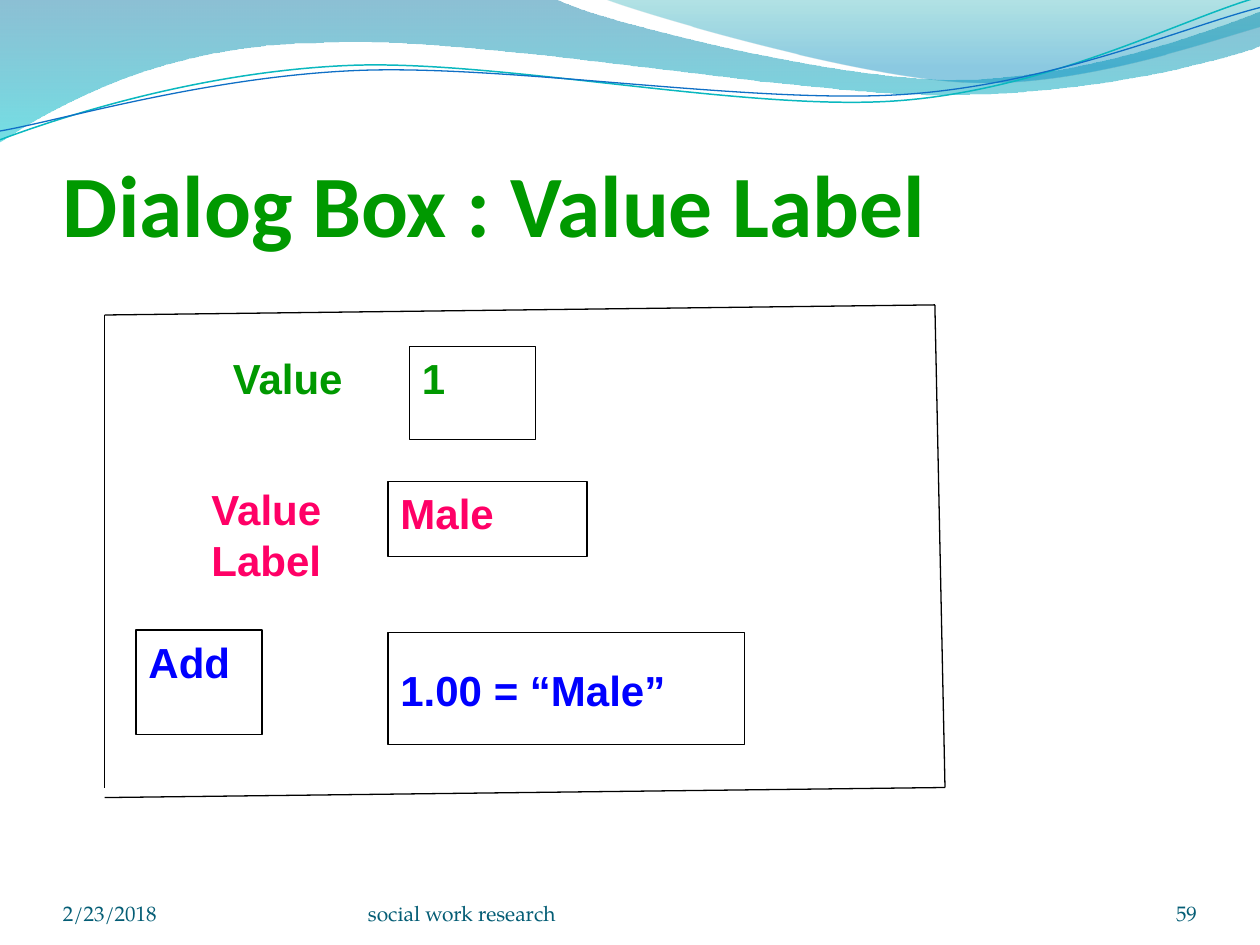
from lxml import etree
from pptx import Presentation
from pptx.dml.color import RGBColor
from pptx.enum.shapes import MSO_CONNECTOR, MSO_SHAPE
from pptx.enum.text import MSO_ANCHOR, PP_ALIGN
from pptx.oxml.ns import qn
from pptx.util import Inches, Pt

RECT, LINE = MSO_SHAPE.RECTANGLE, MSO_CONNECTOR.STRAIGHT
TOP, MID, LOW = MSO_ANCHOR.TOP, MSO_ANCHOR.MIDDLE, MSO_ANCHOR.BOTTOM
LEFT, RIGHT = PP_ALIGN.LEFT, PP_ALIGN.RIGHT

BLACK = RGBColor(0x00, 0x00, 0x00)
WHITE = RGBColor(0xFF, 0xFF, 0xFF)
GREEN = RGBColor(0x00, 0x99, 0x00)
PINK = RGBColor(0xFF, 0x00, 0x66)
BLUE = RGBColor(0x00, 0x00, 0xFF)
TEAL = RGBColor(0x04, 0x5D, 0x75)
DEEP = RGBColor(0x00, 0x74, 0xA1)
CYAN = RGBColor(0x00, 0xC6, 0xCF)
SEA = RGBColor(0x00, 0xA1, 0xA9)
SKY = RGBColor(0x00, 0x8B, 0xBF)
AQUA = RGBColor(0x0A, 0xB8, 0xBF)
ROYAL = RGBColor(0x0F, 0x6F, 0xC6)

PAD = (0.1, 0.05, 0.1, 0.05)
FLAT = (0, 0, 0, 0)

# Each wave is a start point, then line ends (2 numbers) or Bezier curves (6)
BAND = [(0, -0.01), (4.4, -0.01), (4.76, 0.17, 6.64, 0.63, 7.58, 0.63),
        (8.53, 0.63, 9.58, 0.26, 10, 0.09), (10.01, 0.36),
        (9.83, 0.44, 8.7, 0.76, 7.46, 0.75), (6.22, 0.75, 3.82, 0.28, 2.57, 0.34),
        (1.29, 0.35, 0.46, 0.83, -0.01, 1.13)]
CREST = [(4.79, -0.01), (5.09, 0.11, 6.82, 0.62, 7.69, 0.65),
         (8.56, 0.69, 9.61, 0.32, 10, 0.21), (10, 0)]
UPPER = [(0, 1.11), (0.48, 0.93, 1.58, 0.57, 2.77, 0.52),
         (3.95, 0.47, 5.93, 0.89, 7.13, 0.8), (8.33, 0.71, 9.38, 0.15, 9.98, -0.02)]
LOWER = [(0, 1.04), (0.47, 0.96, 1.64, 0.61, 2.83, 0.56),
         (4.03, 0.51, 5.97, 0.83, 7.17, 0.75), (8.36, 0.67, 9.41, 0.21, 10, 0.06)]


def add_wave(slide, parts, close):
    """Draw the end points as lines, then bend those that are curves."""
    parts = [tuple(map(Inches, part)) for part in parts]
    form = slide.shapes.build_freeform(*parts[0], scale=1)
    form.add_line_segments([part[-2:] for part in parts[1:]], close=close)
    wave = form.convert_to_shape()
    wave.shadow.inherit = False
    sides = list(wave._element.spPr.iter(qn("a:lnTo")))
    for side, part in zip(sides, parts[1:]):
        if len(part) == 6:
            bend = etree.Element(qn("a:cubicBezTo"))
            for x, y in zip(part[::2], part[1::2]):
                point = etree.SubElement(bend, qn("a:pt"))
                point.set("x", str(x - wave.left))
                point.set("y", str(y - wave.top))
            side.getparent().replace(side, bend)
    return wave


def add_fill(slide, parts, stops):
    wave = add_wave(slide, parts, True)
    wave.line.fill.background()
    wave.fill.gradient()
    wave.fill.gradient_angle = 270
    for stop, (pos, color, _) in zip(wave.fill.gradient_stops, stops):
        stop.position = pos
        stop.color.rgb = color
    tints = wave._element.spPr.iter(qn("a:srgbClr"))
    for tint, (_, _, alpha) in zip(list(tints), stops):
        etree.SubElement(tint, qn("a:alpha")).set("val", str(alpha * 1000))


def add_curve(slide, parts, color, width):
    wave = add_wave(slide, parts, False)
    wave.fill.background()
    wave.line.color.rgb = color
    wave.line.width = Pt(width)


def set_text(shape, text, color, size=24, font="Arial", bold=True,
             anchor=TOP, align=LEFT, pad=PAD):
    frame = shape.text_frame
    frame.word_wrap = True
    frame.vertical_anchor = anchor
    (frame.margin_left, frame.margin_top,
     frame.margin_right, frame.margin_bottom) = map(Inches, pad)
    frame.text = text
    para = frame.paragraphs[0]
    para.alignment = align
    style = para.runs[0].font
    style.name, style.size, style.bold = font, Pt(size), bold
    style.color.rgb = color


def add_text(slide, spot, text, color, **look):
    set_text(slide.shapes.add_textbox(*map(Inches, spot)), text, color, **look)


def add_box(slide, spot, text, color, **look):
    box = slide.shapes.add_shape(RECT, *map(Inches, spot))
    box.shadow.inherit = False
    box.fill.solid()
    box.fill.fore_color.rgb = WHITE
    box.line.color.rgb = BLACK
    box.line.width = Pt(0.75)
    set_text(box, text, color, **look)


def add_line(slide, *ends):
    line = slide.shapes.add_connector(LINE, *map(Inches, ends))
    line.line.color.rgb = BLACK
    line.line.width = Pt(0.75)
    etree.SubElement(line._element.spPr, qn("a:effectLst"))


def main():
    deck = Presentation()
    deck.slide_width, deck.slide_height = Inches(10), Inches(7.5)
    slide = deck.slides.add_slide(deck.slide_layouts[6])

    # Waves along the top
    add_fill(slide, BAND, [(0, DEEP, 45), (1, CYAN, 55)])
    add_fill(slide, CREST, [(0, SEA, 30), (0.8, SKY, 45)])
    add_curve(slide, UPPER, AQUA, 0.85)
    add_curve(slide, LOWER, ROYAL, 0.75)

    # Title
    add_text(slide, (0.5, 0.77, 9, 1.25), "Dialog Box : Value Label", GREEN,
             size=50, font="Calibri", anchor=LOW, pad=(0, 0.05, 0, 0))

    # Fields and their labels
    add_box(slide, (3.25, 2.75, 1, 0.74), "1", GREEN)
    add_box(slide, (3.08, 3.82, 1.58, 0.6), "Male", PINK)
    add_box(slide, (1.08, 5, 1, 0.83), "Add", BLUE)
    add_box(slide, (3.08, 5.02, 2.83, 0.89), "1.00 = “Male”", BLUE,
            pad=(0.1, 0.25, 0.1, 0.05))
    add_text(slide, (1.58, 3.56, 1.25, 1.43), "Value Label", PINK,
             anchor=MID, pad=(0.1, 0.05, 0.1, 0.12))
    add_text(slide, (1.75, 2.75, 2, 0.5), "Value", GREEN)

    # Dialog frame
    add_line(slide, 0.83, 2.5, 0.83, 6.25)
    add_line(slide, 7.42, 2.42, 7.5, 6.25)
    add_line(slide, 0.83, 6.33, 7.5, 6.25)
    add_line(slide, 0.83, 2.5, 7.42, 2.42)

    # Footer
    for left, width, text, align in (
            (0.5, 2.33, "2/23/2018", LEFT),
            (2.92, 3.67, "social work research", LEFT),
            (8.67, 0.83, "59", RIGHT)):
        add_text(slide, (left, 6.95, width, 0.4), text, TEAL, size=12,
                 font="TeX Gyre Pagella", bold=False, anchor=LOW,
                 align=align, pad=FLAT)

    deck.save("out.pptx")


if __name__ == "__main__":
    main()
